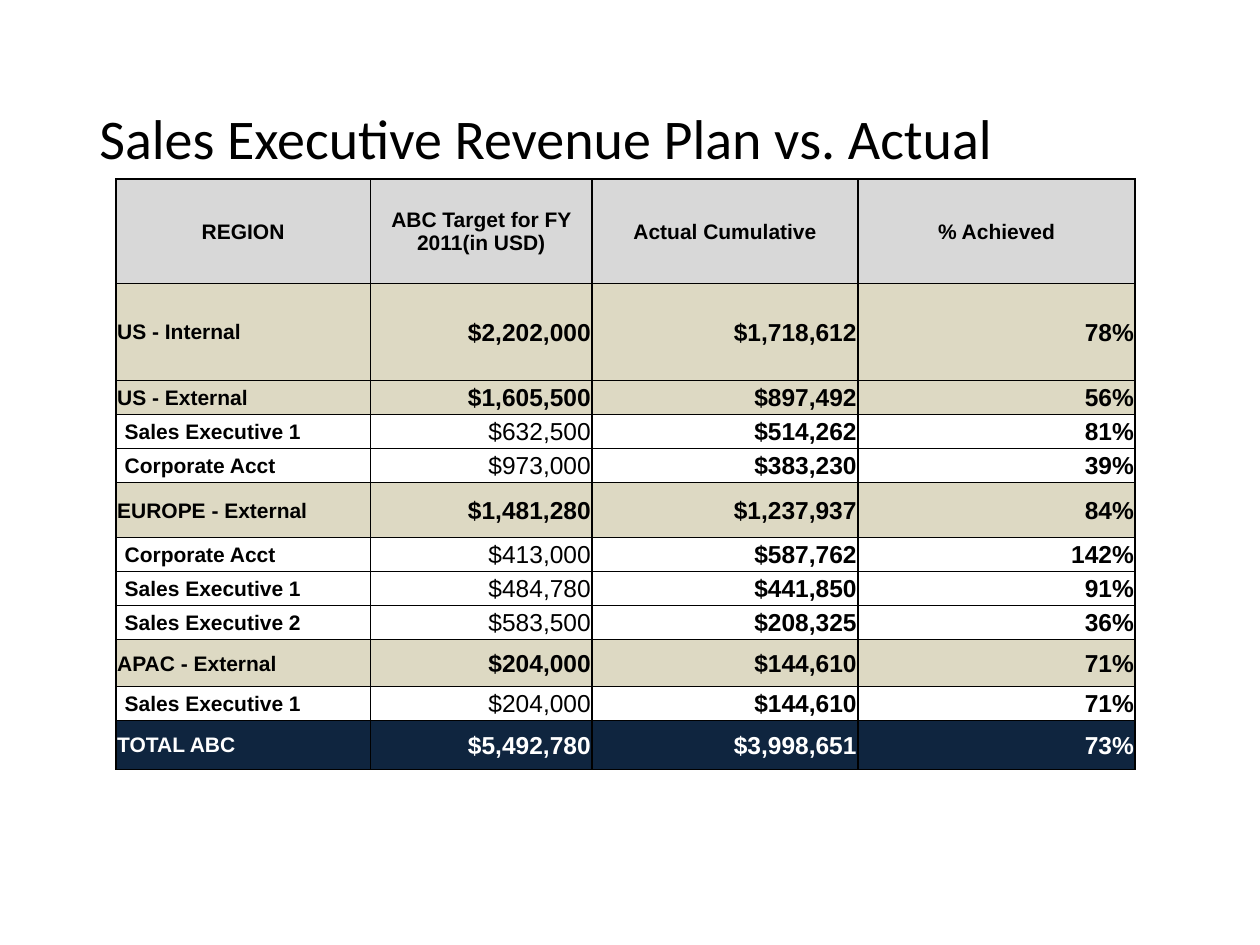
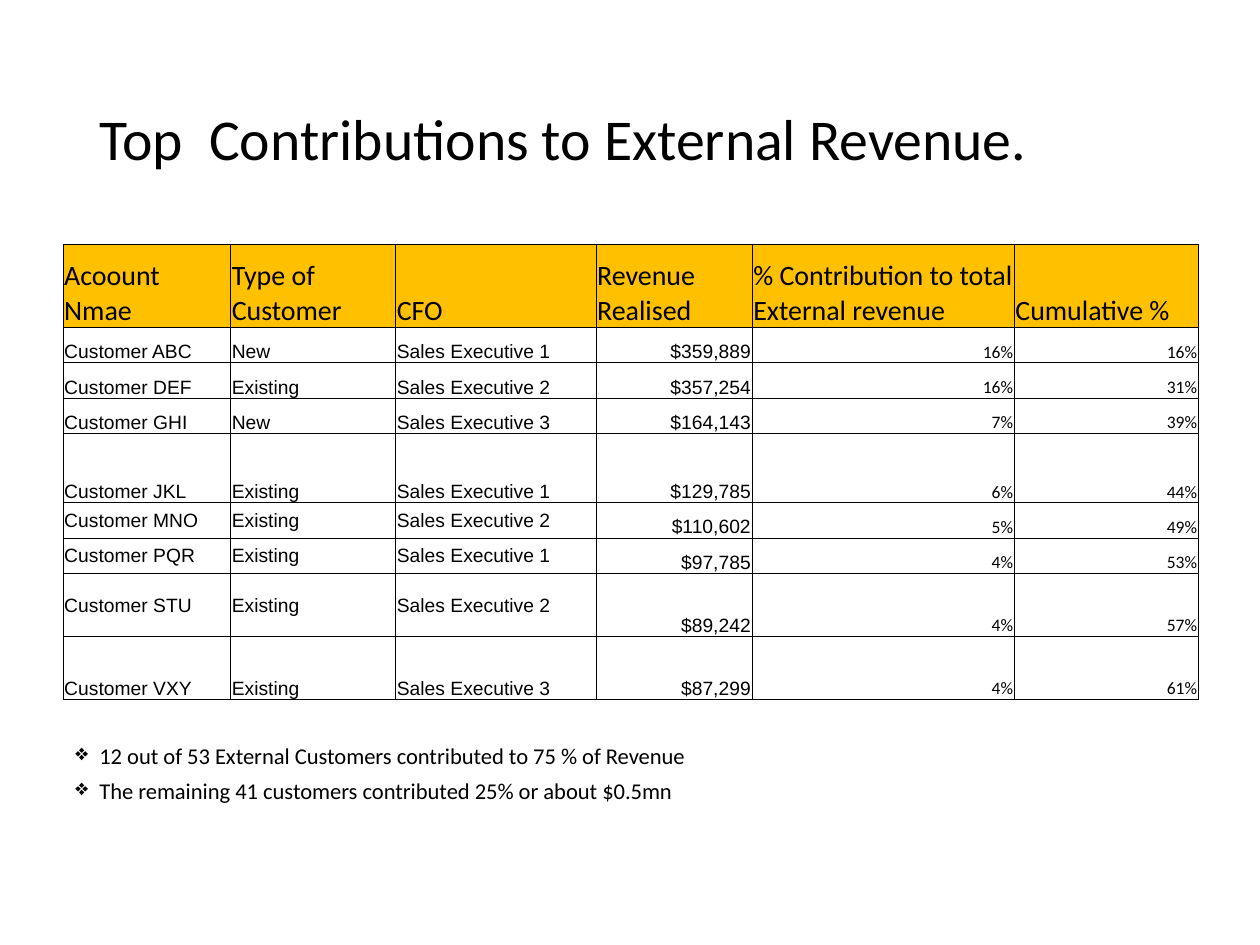
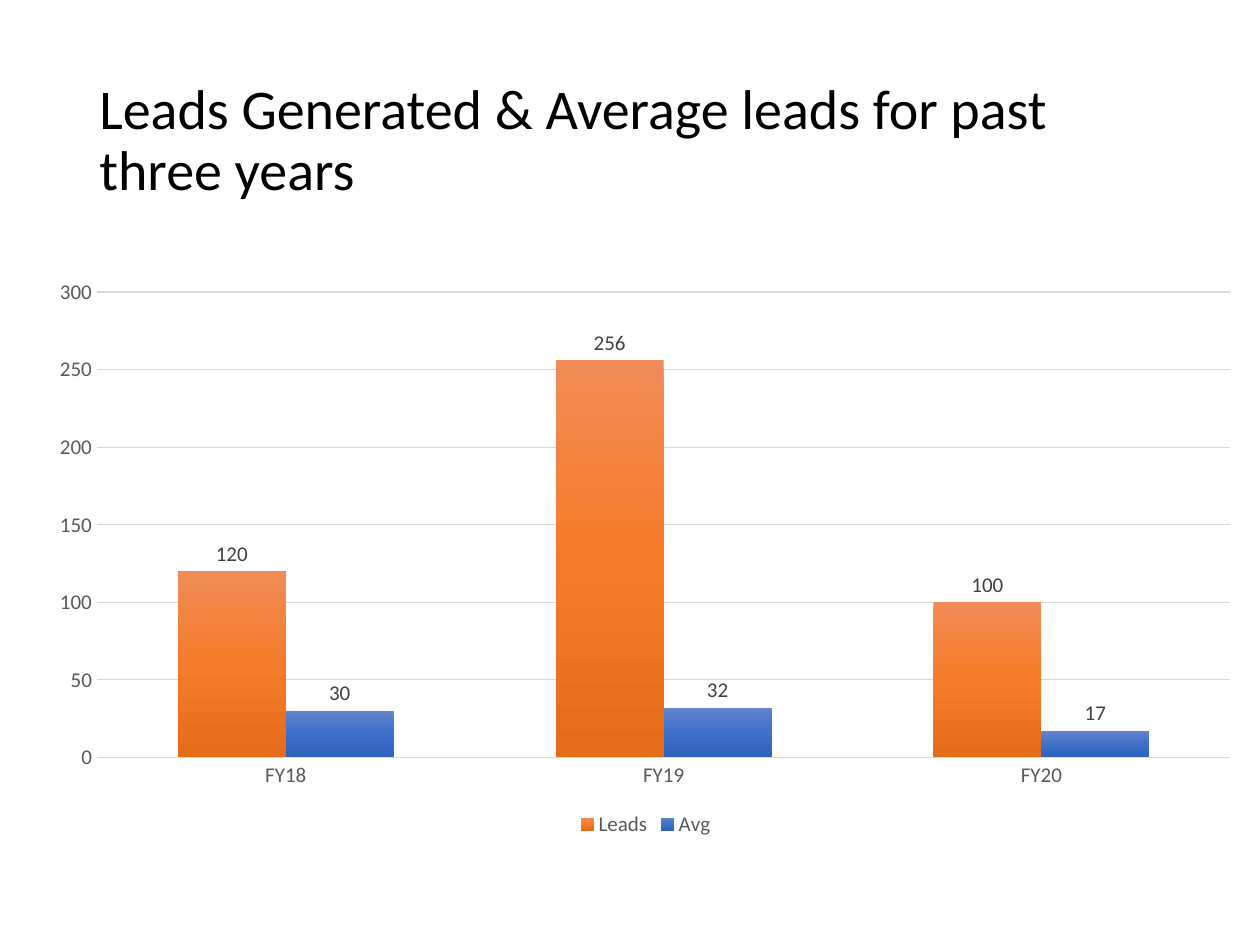
from copy import deepcopy

from pptx import Presentation
from pptx.chart.data import CategoryChartData
from pptx.dml.color import RGBColor
from pptx.enum import chart as ch, text as tx
from pptx.oxml import parse_xml
from pptx.oxml.ns import nsdecls, qn
from pptx.util import Inches, Pt

BLACK = RGBColor(0x00, 0x00, 0x00)
WHITE = RGBColor(0xFF, 0xFF, 0xFF)
GREY = RGBColor(0xD8, 0xD8, 0xD8)
SAND = RGBColor(0xDD, 0xD9, 0xC3)
NAVY = RGBColor(0x0F, 0x25, 0x3F)
GOLD = RGBColor(0xFF, 0xC0, 0x00)
RULE = RGBColor(0xD9, 0xD9, 0xD9)
AXIS = RGBColor(0x59, 0x59, 0x59)
LABEL = RGBColor(0x40, 0x40, 0x40)
ORANGE = (RGBColor(0xF1, 0x8C, 0x57), RGBColor(0xF6, 0x7B, 0x28), RGBColor(0xE5, 0x6C, 0x19))
BLUE = (RGBColor(0x61, 0x83, 0xCB), RGBColor(0x3E, 0x70, 0xCA), RGBColor(0x30, 0x62, 0xBB))

SANS, BODY = "Arial", "Calibri"
LEFT, MID, RIGHT = tx.PP_ALIGN.LEFT, tx.PP_ALIGN.CENTER, tx.PP_ALIGN.RIGHT
CENTER, BOTTOM = tx.MSO_ANCHOR.MIDDLE, tx.MSO_ANCHOR.BOTTOM

REGIONS = [
    ("REGION", "ABC Target for FY 2011(in USD)", "Actual Cumulative", "% Achieved"),
    ("US - Internal", "$2,202,000", "$1,718,612", "78%"),
    ("US - External", "$1,605,500", "$897,492", "56%"),
    ("Sales Executive 1", "$632,500", "$514,262", "81%"),
    ("Corporate Acct", "$973,000", "$383,230", "39%"),
    ("EUROPE - External", "$1,481,280", "$1,237,937", "84%"),
    ("Corporate Acct", "$413,000", "$587,762", "142%"),
    ("Sales Executive 1", "$484,780", "$441,850", "91%"),
    ("Sales Executive 2", "$583,500", "$208,325", "36%"),
    ("APAC - External", "$204,000", "$144,610", "71%"),
    ("Sales Executive 1", "$204,000", "$144,610", "71%"),
    ("TOTAL ABC", "$5,492,780", "$3,998,651", "73%"),
]
ACCOUNTS = [
    ("Acoount Nmae", "Type of Customer", "CFO", "Revenue Realised",
     "% Contribution to total External revenue", "Cumulative %"),
    ("Customer ABC", "New", "Sales Executive 1", "$359,889", "16%", "16%"),
    ("Customer DEF", "Existing", "Sales Executive 2", "$357,254", "16%", "31%"),
    ("Customer GHI", "New", "Sales Executive 3", "$164,143", "7%", "39%"),
    ("Customer JKL", "Existing", "Sales Executive 1", "$129,785", "6%", "44%"),
    ("Customer MNO", "Existing", "Sales Executive 2", "$110,602", "5%", "49%"),
    ("Customer PQR", "Existing", "Sales Executive 1", "$97,785", "4%", "53%"),
    ("Customer STU", "Existing", "Sales Executive 2", "$89,242", "4%", "57%"),
    ("Customer VXY", "Existing", "Sales Executive 3", "$87,299", "4%", "61%"),
]


def style(font, size, color=BLACK, name=BODY, bold=False):
    font.size, font.name, font.bold = Pt(size), name, bold
    font.color.rgb = color


def border(cell, sides):
    """Draw black cell edges; sides gives widths in points as left, right, top, bottom."""
    props = cell._tc.get_or_add_tcPr()
    for side, width in zip("LRTB", sides):
        props.append(parse_xml(
            f'<a:ln{side} {nsdecls("a")} w="{Pt(width)}"><a:solidFill>'
            f'<a:srgbClr val="{BLACK}"/></a:solidFill></a:ln{side}>'))


def shade(series, colors):
    """Fill a series with a three-stop gradient running from top to bottom."""
    fill = series.format.fill
    fill.gradient()
    fill.gradient_angle = 270
    stops = next(series._element.iter(qn("a:gsLst")))
    stops.insert(1, deepcopy(stops[0]))
    for stop, spot, color in zip(fill.gradient_stops, (0, 0.5, 1), colors):
        stop.position, stop.color.rgb = spot, color


def place(chart, *box):
    """Fix the inner plot area as fractions of the chart: x, y, w, h."""
    area = chart._chartSpace.chart.plotArea
    for old in area.findall(qn("c:layout")):
        area.remove(old)
    sizes = "".join(f'<c:{key} val="{val}"/>' for key, val in zip("xywh", box))
    area.insert(0, parse_xml(
        f'<c:layout {nsdecls("c")}><c:manualLayout><c:layoutTarget val="inner"/>'
        f'<c:xMode val="edge"/><c:yMode val="edge"/>{sizes}</c:manualLayout></c:layout>'))


class Deck:
    """Holds the presentation, its shared style and the current slide."""

    def __init__(self):
        self.prs = Presentation()
        self.prs.slide_width, self.prs.slide_height = Inches(10), Inches(7.5)
        self.slide = None

    def start(self, title, size=32):
        self.slide = self.prs.slides.add_slide(self.prs.slide_layouts[6])
        frame = self.frame(0.69, 0.4, 8.62, 1.45)
        frame.vertical_anchor = CENTER
        para = frame.paragraphs[0]
        para.line_spacing = 0.9
        self.run(para, title, size)

    def frame(self, *box):
        frame = self.slide.shapes.add_textbox(*map(Inches, box)).text_frame
        frame.word_wrap = True
        return frame

    def run(self, para, words, size, **look):
        run = para.add_run()
        run.text = words
        style(run.font, size, **look)

    def bullets(self, lines, size, *box):
        frame = self.frame(*box)
        for i, line in enumerate(lines):
            para = frame.add_paragraph() if i else frame.paragraphs[0]
            props = para._p.get_or_add_pPr()
            props.set("marL", str(Inches(0.19)))
            props.set("indent", str(-Inches(0.19)))
            props.append(parse_xml(f'<a:buChar {nsdecls("a")} char="❖"/>'))
            para.line_spacing = 0.8
            if i:
                para.space_before = Pt(7.5)
            self.run(para, line, size)

    def table(self, rows, left, top, widths, heights, look):
        """Add a table; look(row, col) returns the settings for one cell."""
        grid = self.slide.shapes.add_table(
            len(rows), len(widths), Inches(left), Inches(top),
            Inches(sum(widths)), Inches(sum(heights))).table
        grid.first_row = grid.horz_banding = False
        for col, width in zip(grid.columns, widths):
            col.width = Inches(width)
        for line, height in zip(grid.rows, heights):
            line.height = Inches(height)
        for r, row in enumerate(rows):
            for c, words in enumerate(row):
                self.cell(grid.cell(r, c), words, **look(r, c))

    def cell(self, cell, words, size, fill, align, anchor, sides, inset=0.01, **look):
        cell.margin_left = Inches(inset)
        cell.margin_right = cell.margin_top = Inches(0.01)
        cell.margin_bottom = 0
        cell.vertical_anchor = anchor
        border(cell, sides)
        if fill is None:
            cell.fill.background()
        else:
            cell.fill.solid()
            cell.fill.fore_color.rgb = fill
        para = cell.text_frame.paragraphs[0]
        para.alignment = align
        self.run(para, words, size, **look)

    def columns(self, cats, series, *box):
        """Add clustered columns; series holds (name, values, gradient)."""
        data = CategoryChartData()
        data.categories = cats
        for name, vals, _ in series:
            data.add_series(name, vals)
        chart = self.slide.shapes.add_chart(
            ch.XL_CHART_TYPE.COLUMN_CLUSTERED, *map(Inches, box), data).chart
        chart.has_title = False
        style(chart.font, 10)
        plot = chart.plots[0]
        plot.gap_width, plot.overlap, plot.vary_by_categories = 150, 0, False
        for item, (_, _, colors) in zip(plot.series, series):
            shade(item, colors)
            tags = item.data_labels
            tags.show_value = True
            tags.position = ch.XL_LABEL_POSITION.OUTSIDE_END
            style(tags.font, 12, LABEL)
        base, scale = chart.category_axis, chart.value_axis
        for axis in (base, scale):
            axis.major_tick_mark = axis.minor_tick_mark = ch.XL_TICK_MARK.NONE
            style(axis.tick_labels.font, 12, AXIS)
        scale.minimum_scale, scale.maximum_scale, scale.major_unit = 0, 300, 50
        scale.format.line.fill.background()
        for part, width in ((base, 1), (scale.major_gridlines, 0.75)):
            part.format.line.color.rgb = RULE
            part.format.line.width = Pt(width)
        chart.has_legend = True
        chart.legend.position = ch.XL_LEGEND_POSITION.BOTTOM
        chart.legend.include_in_layout = False
        style(chart.legend.font, 12, AXIS)
        return chart


def region(r, c):
    head, total = r == 0, r == len(REGIONS) - 1
    person = REGIONS[r][0].startswith(("Sales", "Corporate"))
    return dict(
        size=12 if head or c == 0 else 14,
        fill=GREY if head else NAVY if total else None if person else SAND,
        align=MID if head else RIGHT if c else LEFT,
        anchor=CENTER,
        sides=(1, 1, 1 if head else 0.5, 1 if total else 0.5),
        inset=0.07 if person and c == 0 else 0.01,
        name=SANS,
        color=WHITE if total else BLACK,
        bold=not (person and c == 1))


def account(r, c):
    head, rate = r == 0, c > 3
    return dict(
        size=16 if head else 10 if rate else 11,
        fill=GOLD if head else None,
        align=RIGHT if c > 2 and not head else LEFT,
        anchor=CENTER if r in (5, 6, 7) and c < 3 else BOTTOM,
        sides=(0.5,) * 4,
        name=BODY if head or rate else SANS)


def main():
    deck = Deck()

    deck.start("Sales Executive Revenue Plan vs. Actual")
    deck.table(REGIONS, 0.92, 1.42, (2.02, 1.76, 2.11, 2.2),
               (0.83, 0.77, *[0.27] * 3, 0.44, *[0.27] * 3, 0.37, 0.27, 0.39), region)

    deck.start("Top  Contributions to External Revenue.", 33)
    deck.bullets(["12 out of 53 External Customers contributed to 75 % of Revenue",
                  "The remaining 41 customers contributed 25% or about $0.5mn"],
                 12.9, 0.5, 5.88, 8.75, 0.58)
    deck.table(ACCOUNTS, 0.5, 1.94, (1.33, 1.31, 1.59, 1.24, 2.08, 1.46),
               (0.66, *[0.28] * 3, 0.55, *[0.28] * 2, 0.5, 0.5), account)

    deck.start("Leads Generated & Average leads for past three years")
    chart = deck.columns(("FY18", "FY19", "FY20"),
                         [("Leads", (120, 256, 100), ORANGE), ("Avg", (30, 32, 17), BLUE)],
                         0.39, 2.22, 9.47, 4.46)
    place(chart, 0.04, 0.02, 0.95, 0.83)

    deck.prs.save("out.pptx")


if __name__ == "__main__":
    main()
